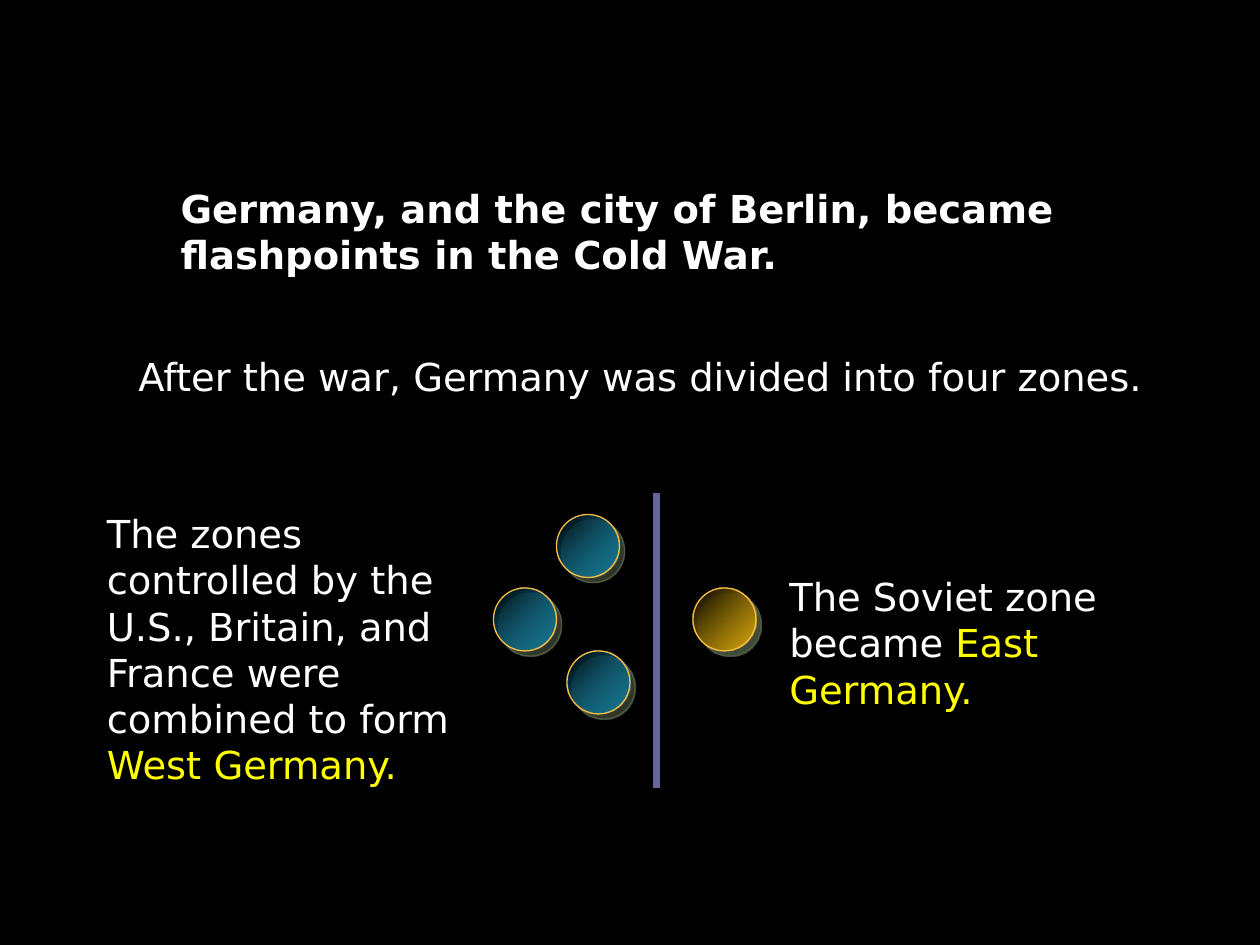
from pptx import Presentation
from pptx.dml.color import RGBColor as RGB
from pptx.enum.shapes import MSO_CONNECTOR as CONN, MSO_SHAPE as SHAPE
from pptx.enum.text import MSO_ANCHOR as ANCHOR, MSO_AUTO_SIZE as AUTO, PP_ALIGN as ALIGN
from pptx.oxml.ns import qn
from pptx.util import Pt
from lxml.etree import SubElement as Sub

HUES = {"back": "000000", "text": "FFFFFF", "key": "FFFF00", "wall": "666699",
        "rim": "F7BD40", "shade": "ADC793", "west": "00B0F0", "east": "FFC000"}
FONT = "DejaVu Sans"


def hue(name):
    return RGB.from_string(HUES[name])


def write(shape, *runs, size=22, bold=False, wrap=True):
    frame = shape.text_frame
    frame.word_wrap = wrap
    frame.auto_size = AUTO.SHAPE_TO_FIT_TEXT
    frame.vertical_anchor = ANCHOR.TOP
    para = frame.paragraphs[0]
    para.alignment = ALIGN.LEFT
    for text, color in runs:
        run = para.add_run()
        run.text = text
        font = run.font
        font.name, font.size, font.bold = FONT, Pt(size), bold
        font.color.rgb = hue(color)


def place(shape, left, top, width, height):
    shape.left, shape.top = Pt(left), Pt(top)
    shape.width, shape.height = Pt(width), Pt(height)


def label(slide, box, *runs, **form):
    write(slide.shapes.add_textbox(*map(Pt, box)), *runs, **form)


def disc(slide, left, top, color, alpha, size=36):
    shape = slide.shapes.add_shape(SHAPE.OVAL, Pt(left), Pt(top), Pt(size), Pt(size))
    fill = shape.fill
    fill.gradient()
    fill.gradient_angle = 135
    for stop, name, spot in zip(fill.gradient_stops, (color, "back"), (0, 1)):
        stop.color.rgb = hue(name)
        stop.position = spot
    tint = fill.gradient_stops[0].color
    tone = shape.element.spPr.find(".//" + qn("a:gs")).find(qn("a:srgbClr"))
    Sub(tone, qn("a:alpha"), val=str(alpha * 1000))
    shape.line.color.rgb = hue("rim")
    shape.line.width = Pt(0.75)
    shape.shadow.inherit = False
    glow = Sub(shape.element.spPr.find(qn("a:effectLst")), qn("a:outerShdw"),
               blurRad="0", dist=str(Pt(4.2)), dir="2700000", algn="ctr", rotWithShape="0")
    shade = Sub(glow, qn("a:srgbClr"), val=HUES["shade"])
    Sub(shade, qn("a:alpha"), val="46000")


def head(slide, box):
    title = slide.shapes.title
    place(title, *box)
    write(title, ("Germany, and the city of Berlin, became flashpoints in the Cold War.", "text"),
          bold=True)


def zones(slide, left, top, width, height):
    mid = left + 321
    wall = slide.shapes.add_connector(CONN.STRAIGHT, Pt(mid), Pt(top), Pt(mid), Pt(top + height))
    wall.line.color.rgb = hue("wall")
    wall.line.width = Pt(4)
    Sub(wall._element.spPr, qn("a:effectLst"))
    for x, y in ((-57, 12), (-93, 54), (-51, 90)):
        disc(slide, mid + x, top + y, "west", 50)
    disc(slide, mid + 21, top + 54, "east", 79)
    label(slide, (left, top + 6, 216, 167),
          ("The zones controlled by the U.S., Britain, and France were combined to form ", "text"),
          ("West Germany.", "key"))
    label(slide, (left + width - 204, top + 42, 204, 87),
          ("The Soviet zone became ", "text"), ("East Germany.", "key"))


def main():
    deck = Presentation()
    deck.slide_width, deck.slide_height = Pt(720), Pt(540)
    slide = deck.slides.add_slide(deck.slide_layouts[5])
    fill = slide.background.fill
    fill.solid()
    fill.fore_color.rgb = hue("back")
    head(slide, (96, 102, 528, 60))
    label(slide, (72, 198, 595, 34),
          ("After the war, Germany was divided into four zones.", "text"), wrap=False)
    zones(slide, 54, 282, 594, 168)
    deck.save("out.pptx")


if __name__ == "__main__":
    main()
